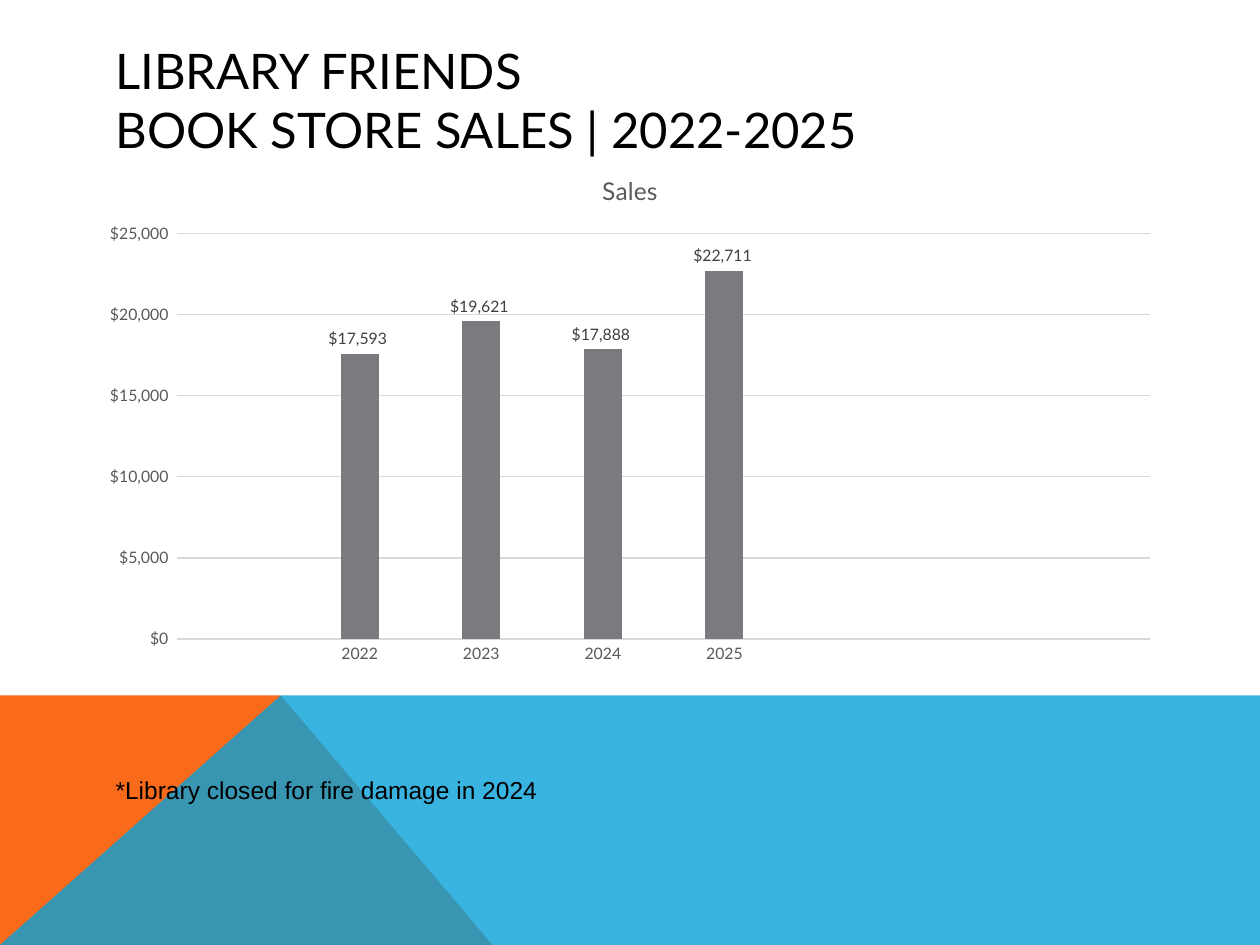
from dataclasses import dataclass

from lxml.etree import SubElement
from pptx import Presentation
from pptx.chart.data import CategoryChartData
from pptx.dml.color import RGBColor
from pptx.enum.chart import XL_CHART_TYPE, XL_LABEL_POSITION, XL_TICK_MARK
from pptx.enum.text import MSO_AUTO_SIZE
from pptx.oxml.ns import qn
from pptx.slide import Slide
from pptx.util import Cm, Pt

SLIDE_WIDTH, SLIDE_HEIGHT = 25.4, 19.05
BAND_TOP, PEAK = 14.02, 5.66
CURRENCY = '"$"#,##0_);[Red]\\("$"#,##0\\)'
SALES = {"2022": 17593, "2023": 19621, "2024": 17888, "2025": 22711}


def color(value):
    return RGBColor.from_string(value)


@dataclass
class SlideBuilder:
    slide: Slide
    heading_font: str = "Lato"
    note_font: str = "Arial"
    text_color: str = "000000"
    muted_color: str = "595959"
    label_color: str = "404040"
    grid_color: str = "D9D9D9"
    bar_color: str = "797B7E"

    def style_font(self, font, size, value, name=None):
        font.name = name or self.heading_font
        font.size = Pt(size)
        font.bold = False
        font.color.rgb = color(value)

    def style_line(self, line):
        line.color.rgb = color(self.grid_color)
        line.width = Pt(0.75)

    def polygon(self, points, fill, opacity=100):
        corners = [(Cm(x), Cm(y)) for x, y in points]
        builder = self.slide.shapes.build_freeform(*corners[0])
        builder.add_line_segments(corners[1:], close=True)
        shape = builder.convert_to_shape()
        shape.shadow.inherit = False
        shape.fill.solid()
        shape.fill.fore_color.rgb = color(fill)
        shape.line.fill.background()
        if opacity < 100:
            fill_element = shape.element.spPr.find(qn("a:solidFill"))
            SubElement(fill_element[0], qn("a:alpha"), val=str(opacity * 1000))

    def text(self, content, left, top, width, height, size, font):
        shape = self.slide.shapes.add_textbox(Cm(left), Cm(top), Cm(width), Cm(height))
        text_frame = shape.text_frame
        text_frame.word_wrap = True
        text_frame.auto_size = MSO_AUTO_SIZE.SHAPE_TO_FIT_TEXT
        text_frame.text = content
        for run in text_frame.paragraphs[0].runs:
            self.style_font(run.font, size, self.text_color, font)

    def column_chart(self, title, categories, values, left, top, width, height):
        data = CategoryChartData(number_format=CURRENCY)
        data.categories = categories
        data.add_series(title, values)
        chart = self.slide.shapes.add_chart(
            XL_CHART_TYPE.COLUMN_CLUSTERED,
            Cm(left), Cm(top), Cm(width), Cm(height), data,
        ).chart
        self.style_font(chart.font, 10, self.text_color)
        chart.has_legend = False
        chart.has_title = True
        chart.chart_title.include_in_layout = False
        paragraph = chart.chart_title.text_frame.paragraphs[0]
        paragraph.text = title
        self.style_font(paragraph.runs[0].font, 14, self.muted_color)

        for axis in (chart.category_axis, chart.value_axis):
            axis.major_tick_mark = axis.minor_tick_mark = XL_TICK_MARK.NONE
            self.style_font(axis.tick_labels.font, 9, self.muted_color)
        self.style_line(chart.category_axis.format.line)
        value_axis = chart.value_axis
        value_axis.minimum_scale = 0
        value_axis.maximum_scale = 25000
        value_axis.major_unit = 5000
        value_axis.format.line.fill.background()
        value_axis.tick_labels.number_format = CURRENCY
        value_axis.tick_labels.number_format_is_linked = False
        self.style_line(value_axis.major_gridlines.format.line)

        plot = chart.plots[0]
        plot.gap_width = 219
        plot.overlap = -27
        plot.vary_by_categories = False
        series = plot.series[0]
        series.format.fill.solid()
        series.format.fill.fore_color.rgb = color(self.bar_color)
        labels = series.data_labels
        labels.show_value = True
        labels.position = XL_LABEL_POSITION.OUTSIDE_END
        labels.number_format = CURRENCY
        labels.number_format_is_linked = False
        self.style_font(labels.font, 9, self.label_color)


def main():
    presentation = Presentation()
    presentation.slide_width = Cm(SLIDE_WIDTH)
    presentation.slide_height = Cm(SLIDE_HEIGHT)
    builder = SlideBuilder(presentation.slides.add_slide(presentation.slide_layouts[6]))

    builder.polygon(
        [(0, SLIDE_HEIGHT), (0, BAND_TOP), (PEAK, BAND_TOP), (9.93, SLIDE_HEIGHT)],
        "F96A1B",
    )
    builder.polygon(
        [(0, SLIDE_HEIGHT), (PEAK, BAND_TOP), (SLIDE_WIDTH, BAND_TOP),
         (SLIDE_WIDTH, SLIDE_HEIGHT)],
        "08A1D9", opacity=80,
    )
    builder.text("LIBRARY FRIENDS\vBOOK STORE SALES | 2022-2025",
                 2.08, 0.69, 21.23, 2.64, 28, builder.heading_font)
    builder.column_chart(
        "Sales",
        ["", *SALES, "", "", ""],
        [None, *SALES.values(), None, None, None],
        1.78, 3.05, 21.84, 10.54,
    )
    builder.text("*Library closed for fire damage in 2024",
                 2.08, 15.49, 18.16, 0.86, 14, builder.note_font)
    presentation.save("out.pptx")


if __name__ == "__main__":
    main()
